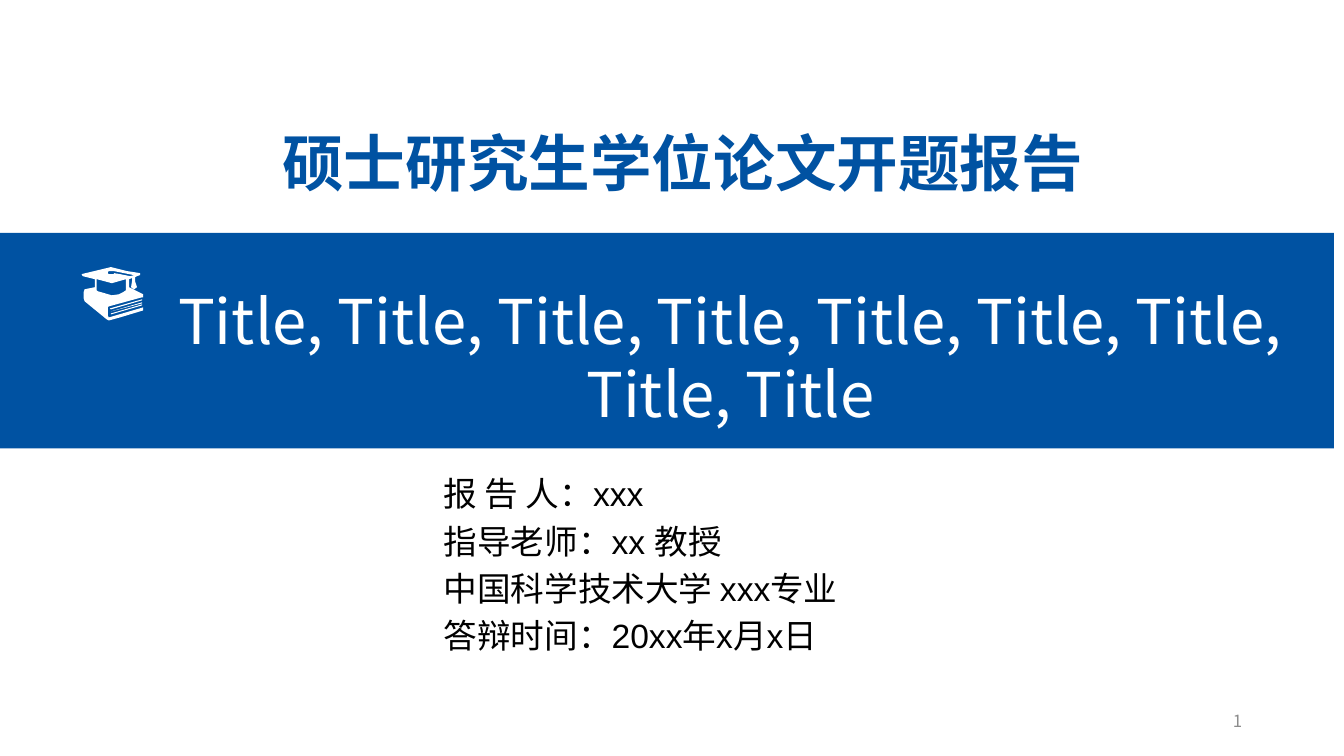
import pptx
import pptx.dml.color
import pptx.enum.shapes
import pptx.enum.text
import pptx.oxml.ns
import pptx.util
from lxml import etree
from pptx.util import Inches

BLUE, WHITE, BLACK, GRAY = "0052A2", "FFFFFF", "000000", "8C8C8C"
SANS = "Noto Sans CJK SC"
LEFT = pptx.enum.text.PP_ALIGN.LEFT
CENTER = pptx.enum.text.PP_ALIGN.CENTER
RIGHT = pptx.enum.text.PP_ALIGN.RIGHT
TITLE_SPACING = pptx.util.Pt(51.9)
DETAILS = [
    "报 告 人：xxx",
    "指导老师：xx 教授",
    "中国科学技术大学 xxx专业",
    "答辩时间：20xx年x月x日",
]
ICON_UNITS_PER_INCH = 100
CAP_AND_BOOK = [
    [(110, 265), (81, 272), (82, 274), (94, 277), (94, 285), (84, 287), (83, 290),
     (83, 296), (84, 299), (106, 317), (108, 318), (119, 315), (108, 315),
     (107, 313), (107, 305), (108, 304), (141, 295), (142, 295), (142, 293),
     (111, 293), (104, 291), (97, 289), (96, 288), (96, 277), (128, 277),
     (131, 276), (134, 276), (134, 275), (136, 274), (129, 274), (119, 272),
     (108, 272), (107, 271), (107, 270), (108, 269), (126, 269)],
    [(142, 305), (108, 315), (119, 315), (142, 308)],
    [(141, 302), (110, 311), (110, 312), (141, 303)],
    [(141, 300), (110, 309), (141, 301)],
    [(141, 297), (109, 306), (110, 307), (141, 298)],
    [(128, 277), (125, 277), (125, 288), (122, 290), (118, 292), (111, 293),
     (142, 293), (142, 292), (128, 285)],
    [(134, 276), (131, 276), (131, 279), (130, 285), (133, 287), (136, 285),
     (134, 279)],
    [(125, 277), (96, 277), (111, 281)],
    [(126, 269), (111, 269), (113, 269), (133, 273), (129, 274), (136, 274),
     (139, 273), (139, 271)],
    [(113, 271), (113, 272), (111, 272), (119, 272)],
]


def color(value):
    """Turn a hex string into a colour."""
    return pptx.dml.color.RGBColor.from_string(value)


def style_shape(shape, fill):
    """Give a shape a plain fill without line or shadow."""
    shape.shadow.inherit = False
    shape.fill.solid()
    shape.fill.fore_color.rgb = color(fill)
    shape.line.fill.background()


def add_band(slide, left, top, width, height, fill):
    """Add a filled rectangle."""
    shape = slide.shapes.add_shape(
        pptx.enum.shapes.MSO_SHAPE.RECTANGLE,
        Inches(left), Inches(top), Inches(width), Inches(height))
    style_shape(shape, fill)


def add_icon(slide, contours, fill):
    """Add one freeform made of closed contours."""
    scale = Inches(1) / ICON_UNITS_PER_INCH
    builder = slide.shapes.build_freeform(*contours[0][0], scale=scale)
    for index, (start, *points) in enumerate(contours):
        if index:
            builder.move_to(*start)
        builder.add_line_segments(points, close=True)
    style_shape(builder.convert_to_shape(), fill)


def add_text(slide, left, top, width, height, lines, size, text_color,
             font=SANS, bold=False, align=LEFT, spacing=1.0):
    """Add a text box without insets and return its text frame."""
    box = slide.shapes.add_textbox(
        Inches(left), Inches(top), Inches(width), Inches(height))
    frame = box.text_frame
    frame.word_wrap = True
    frame.margin_left = frame.margin_right = 0
    frame.margin_top = frame.margin_bottom = 0
    frame.text = "\n".join(lines)
    for paragraph in frame.paragraphs:
        paragraph.alignment = align
        paragraph.line_spacing = spacing
        for run in paragraph.runs:
            run.font.name = font
            run.font.size = pptx.util.Pt(size)
            run.font.bold = bold
            run.font.color.rgb = color(text_color)
            east_asian = etree.SubElement(
                run.font._element, pptx.oxml.ns.qn("a:ea"))
            east_asian.set("typeface", SANS)
    return frame


def main():
    """Build the cover slide of the thesis proposal."""
    presentation = pptx.Presentation()
    presentation.slide_width = Inches(13.33)
    presentation.slide_height = Inches(7.5)
    slide = presentation.slides.add_slide(presentation.slide_layouts[6])

    add_band(slide, -0.1, 2.31, 13.33, 2.14, BLUE)
    number = add_text(slide, 9.42, 6.95, 2.9, 0.4, ["1"], 12, GRAY, align=RIGHT)
    number.vertical_anchor = pptx.enum.text.MSO_ANCHOR.MIDDLE
    add_icon(slide, CAP_AND_BOOK, WHITE)

    details = add_text(slide, 4.4, 4.62, 5.2, 1.89, DETAILS, 24, BLACK,
                       font="Arial", spacing=1.18)
    date = details.paragraphs[-1]
    date.line_spacing = pptx.util.Pt(28.4)
    date.space_before = pptx.util.Pt(5.2)

    add_text(slide, 1.63, 2.82, 11.23, 1.46, [", ".join(["Title"] * 9)], 44,
             WHITE, align=CENTER, spacing=TITLE_SPACING)
    add_text(slide, 1.87, 1.25, 9.81, 0.73, ["硕士研究生学位论文开题报告"], 44,
             BLUE, bold=True, align=CENTER, spacing=TITLE_SPACING)
    presentation.save("out.pptx")


if __name__ == "__main__":
    main()
